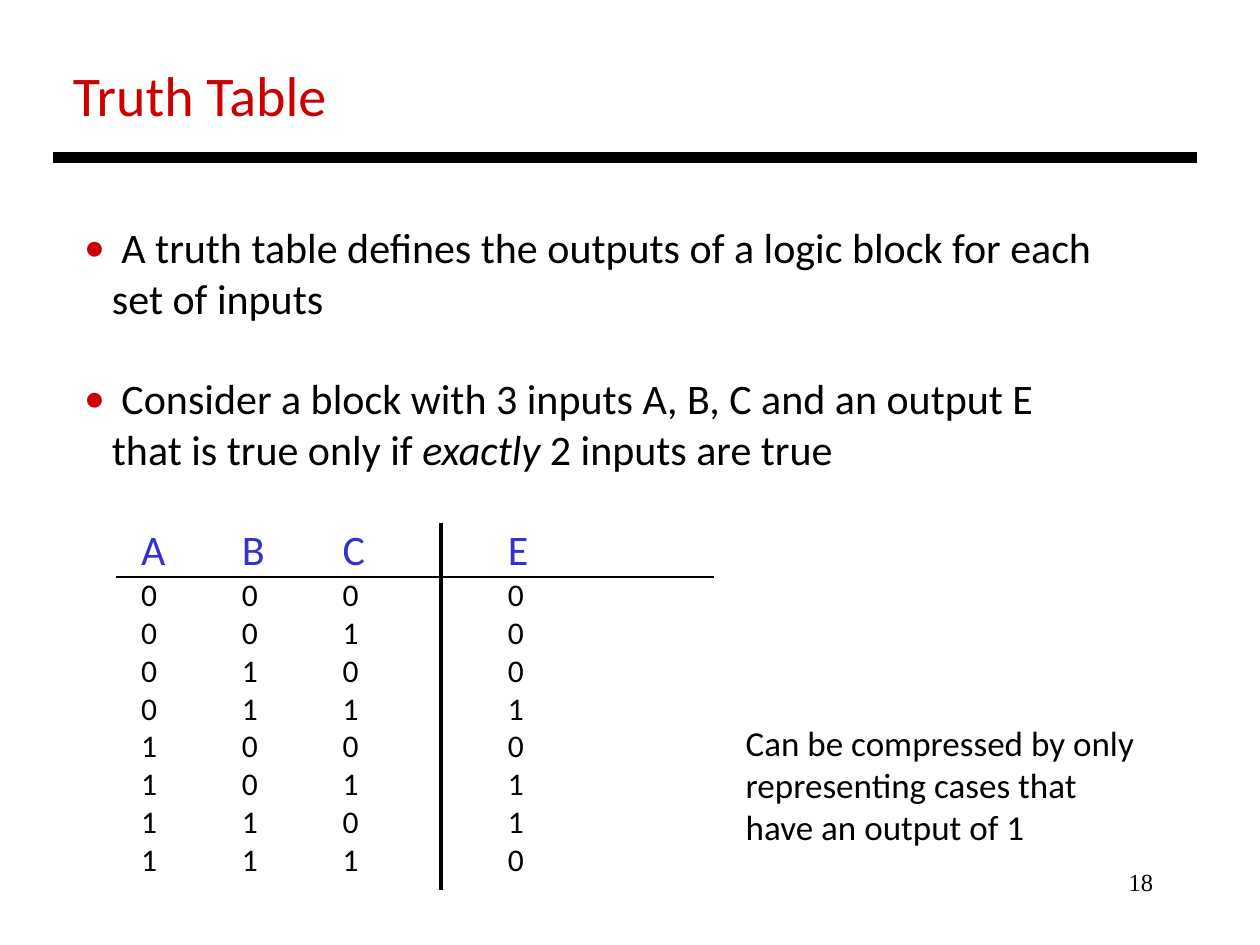
from lxml.etree import SubElement
from pptx import Presentation
from pptx.dml.color import RGBColor
from pptx.enum.shapes import MSO_CONNECTOR
from pptx.enum.text import PP_ALIGN
from pptx.oxml.ns import qn
from pptx.util import Inches, Pt

COLS, ROWS = 100, 75
UNIT = Inches(0.1)
BLACK, RED, BLUE = "000000", "CC0000", "3333CC"
LINE_RATIO = 1.2
HEADERS = ["A", "B", "C", "E"]
COLUMN_WIDTHS = [8, 8, 9.8, 21.7]
CELL_INSETS = [2, 2, 2, 5.3]


def grid(n):
    return round(n * UNIT)


def set_color(color, value):
    color.rgb = RGBColor.from_string(value)


def format_paragraph(p, size, color=BLACK, font="Calibri"):
    for r in p.runs:
        r.font.size = Pt(size)
        r.font.name = font
        set_color(r.font.color, color)


def add_text(s, at, text, size, color=BLACK, font="Calibri", align=PP_ALIGN.LEFT, wrap=False):
    tf = s.shapes.add_textbox(*map(grid, at)).text_frame
    tf.word_wrap = wrap
    tf.text = text
    for p in tf.paragraphs:
        p.alignment = align
        format_paragraph(p, size, color, font)
    return tf


def add_bullet(p, color):
    pPr = p._p.get_or_add_pPr()
    pPr.set("marL", str(grid(2.2)))
    pPr.set("indent", str(-grid(2.2)))
    SubElement(SubElement(pPr, qn("a:buClr")), qn("a:srgbClr"), val=color)
    SubElement(pPr, qn("a:buFont"), typeface="Calibri")
    SubElement(pPr, qn("a:buChar"), char="•")


def add_bullets(s, at, items, size):
    tf = add_text(s, at, "\n".join(items), size)
    for i, p in enumerate(tf.paragraphs):
        p.line_spacing = Pt(size * LINE_RATIO)
        p.space_before = Pt(size * LINE_RATIO if i else 0)
        add_bullet(p, RED)
    return tf


def add_rule(s, start, end, width):
    line = s.shapes.add_connector(MSO_CONNECTOR.STRAIGHT, *map(grid, start + end))
    set_color(line.line.color, BLACK)
    line.line.width = Pt(width)
    SubElement(line._element.spPr, qn("a:effectLst"))


def fill_cell(cell, text, inset, size, color):
    cell.fill.background()
    cell.margin_left = grid(inset)
    cell.margin_right = cell.margin_top = cell.margin_bottom = 0
    cell.text_frame.text = text
    p = cell.text_frame.paragraphs[0]
    p.line_spacing = Pt(size * LINE_RATIO)
    format_paragraph(p, size, color)


def truth_rows():
    for n in range(8):
        inputs = [n >> 2 & 1, n >> 1 & 1, n & 1]
        yield [str(v) for v in inputs + [int(sum(inputs) == 2)]]


def add_truth_table(s, left, top):
    rows = [HEADERS, *truth_rows()]
    table = s.shapes.add_table(
        len(rows), len(HEADERS), grid(left), grid(top), grid(sum(COLUMN_WIDTHS)), grid(28)
    ).table
    table.first_row = table.horz_banding = False
    for column, width in zip(table.columns, COLUMN_WIDTHS):
        column.width = grid(width)
    for i, values in enumerate(rows):
        size, color, height = (18, BLACK, 3) if i else (24, BLUE, 4)
        table.rows[i].height = grid(height)
        for j, value in enumerate(values):
            fill_cell(table.cell(i, j), value, CELL_INSETS[j], size, color)


def main():
    prs = Presentation()
    prs.slide_width, prs.slide_height = grid(COLS), grid(ROWS)
    s = prs.slides.add_slide(prs.slide_layouts[6])

    add_text(s, (71.7, 68.3, 20.8, 5), "18", 14, font="Times New Roman",
             align=PP_ALIGN.RIGHT, wrap=True)
    add_text(s, (4.8, 4.3, 22.4, 6.4), "Truth Table", 32, RED)
    add_rule(s, (4.2, 12.5), (95, 12.5), 6)

    tf = add_bullets(s, (5.7, 17.1, 82.2, 21), [
        " A truth table defines the outputs of a logic block for each\vset of inputs",
        " Consider a block with 3 inputs A, B, C and an output E\vthat is true only if ",
    ], 24)
    p = tf.paragraphs[1]
    for text, italic in (("exactly", True), (" 2 inputs are true", False)):
        r = p.add_run()
        r.text = text
        r.font.italic = italic
    format_paragraph(p, 24)

    add_truth_table(s, 9.2, 41.8)
    add_rule(s, (9.2, 45.8), (56.7, 45.8), 1)
    add_rule(s, (35, 41.5), (35, 70.6), 2.25)

    add_text(s, (58.2, 56.8, 33.1, 11.1),
             "Can be compressed by only\nrepresenting cases that\nhave an output of 1", 20)
    prs.save("out.pptx")


if __name__ == "__main__":
    main()
